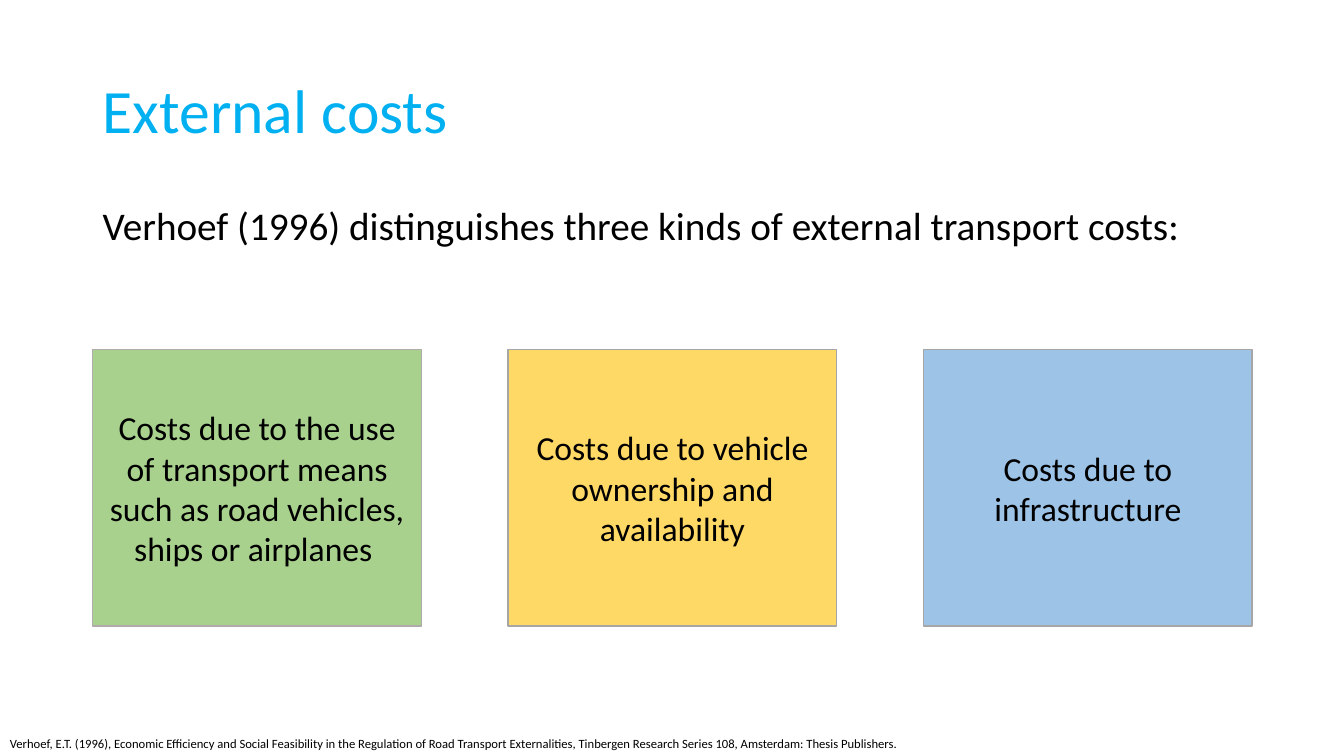
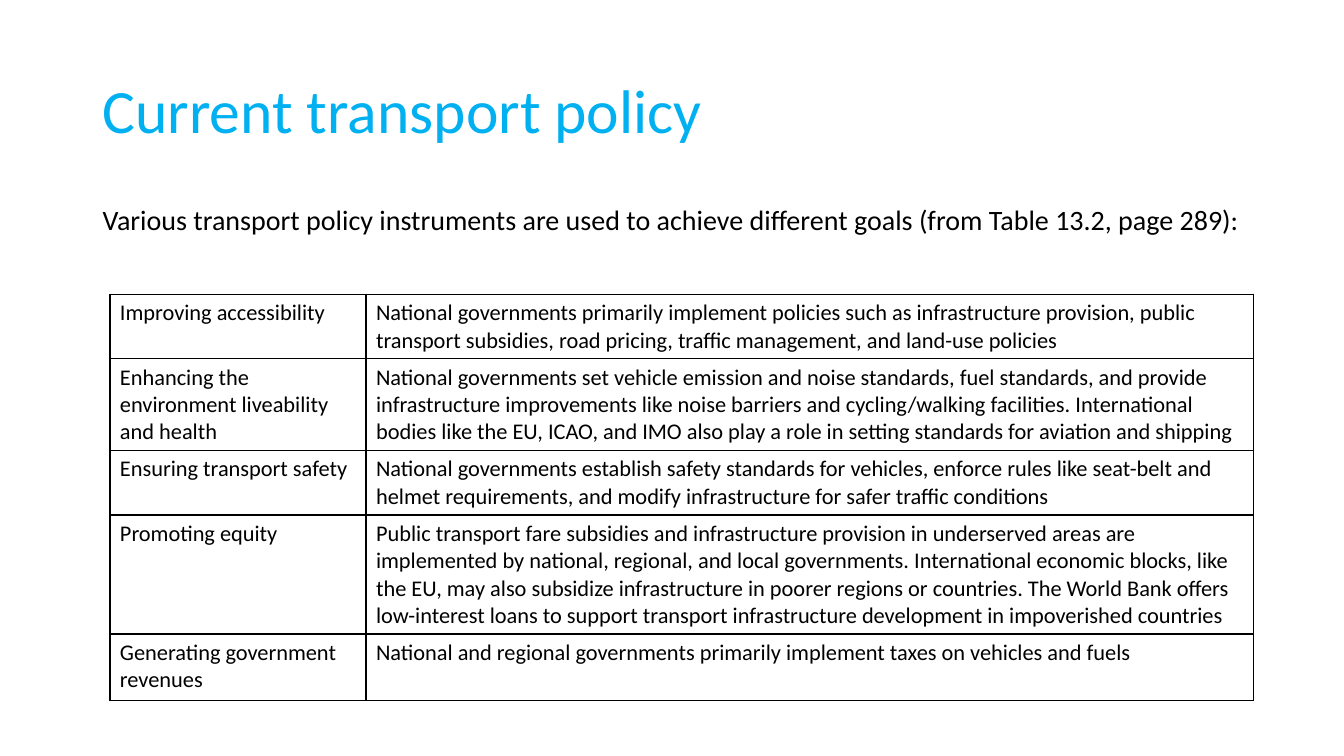
from lxml import etree
from pptx import Presentation
from pptx import util as u
from pptx.dml.color import RGBColor
from pptx.enum import shapes, text
from pptx.oxml.ns import qn

FONT = "Calibri"
COLORS = {
    "title": "00B0F0",
    "text": "000000",
    "border": "000000",
    "use": "A9D18E",
    "ownership": "FFD966",
    "infrastructure": "9DC3E6",
    "warm_gray": "AFABAB",
    "gray": "A6A6A6",
}
LEFT, WIDTH = 0.92, 11.5

COST_KINDS = [
    ("Costs due to the use of transport means such as road vehicles, ships or airplanes ",
     "use", "warm_gray"),
    ("Costs due to vehicle ownership and availability", "ownership", "gray"),
    ("Costs due to infrastructure", "infrastructure", "gray"),
]
SOURCE = (
    "Verhoef, E.T. (1996), Economic Efficiency and Social Feasibility in the Regulation of "
    "Road Transport Externalities, Tinbergen Research Series 108, Amsterdam: Thesis Publishers."
)
POLICIES = [
    (0.64, "Improving accessibility",
     "National governments primarily implement policies such as infrastructure provision, "
     "public transport subsidies, road pricing, traffic management, and land-use policies"),
    (0.91, "Enhancing the environment liveability and health",
     "National governments set vehicle emission and noise standards, fuel standards, and "
     "provide infrastructure improvements like noise barriers and cycling/walking facilities. "
     "International bodies like the EU, ICAO, and IMO also play a role in setting standards "
     "for aviation and shipping"),
    (0.64, "Ensuring transport safety",
     "National governments establish safety standards for vehicles, enforce rules like "
     "seat-belt and helmet requirements, and modify infrastructure for safer traffic conditions"),
    (1.18, "Promoting equity",
     "Public transport fare subsidies and infrastructure provision in underserved areas are "
     "implemented by national, regional, and local governments. International economic blocks, "
     "like the EU, may also subsidize infrastructure in poorer regions or countries. The World "
     "Bank offers low-interest loans to support transport infrastructure development in "
     "impoverished countries"),
    (0.66, "Generating government revenues",
     "National and regional governments primarily implement taxes on vehicles and fuels"),
]


def rgb(name):
    return RGBColor.from_string(COLORS[name])


def write(tf, content, size, color="text", align=None, spacing=None):
    tf.word_wrap = True
    p = tf.paragraphs[0]
    p.text = content
    p.alignment = align
    p.line_spacing = spacing
    p.font.name = FONT
    p.font.size = u.Pt(size)
    p.font.color.rgb = rgb(color)


def add_text(s, box, content, size, color="text", spacing=None,
             anchor=text.MSO_ANCHOR.TOP):
    tf = s.shapes.add_textbox(*map(u.Inches, box)).text_frame
    tf.vertical_anchor = anchor
    write(tf, content, size, color, spacing=spacing)


def add_slide(prs, title, intro, intro_size):
    s = prs.slides.add_slide(prs.slide_layouts[6])
    add_text(s, (LEFT, 0.4, WIDTH, 1.45), title, 44, "title", 0.9, text.MSO_ANCHOR.MIDDLE)
    add_text(s, (LEFT, 2, WIDTH, 0.6), intro, intro_size, spacing=0.9)
    return s


def add_cost_boxes(s):
    width, height = 3.26, 2.74
    step = (WIDTH - width) / (len(COST_KINDS) - 1)
    for i, (label, fill, line) in enumerate(COST_KINDS):
        box = (LEFT + i * step, 3.47, width, height)
        sp = s.shapes.add_shape(shapes.MSO_SHAPE.RECTANGLE, *map(u.Inches, box))
        sp.shadow.inherit = False
        sp.fill.solid()
        sp.fill.fore_color.rgb = rgb(fill)
        sp.line.color.rgb = rgb(line)
        sp.line.width = u.Pt(1)
        sp.text_frame.vertical_anchor = text.MSO_ANCHOR.MIDDLE
        write(sp.text_frame, label, 24, align=text.PP_ALIGN.CENTER)


def set_borders(cell):
    tc_pr = cell._tc.get_or_add_tcPr()
    for side in ("lnL", "lnR", "lnT", "lnB"):
        ln = etree.SubElement(tc_pr, qn(f"a:{side}"), w=str(u.Pt(1)))
        fill = etree.SubElement(ln, qn("a:solidFill"))
        etree.SubElement(fill, qn("a:srgbClr"), val=COLORS["border"])


def add_policy_table(s):
    widths = (2.54, 8.8)
    heights = [row[0] for row in POLICIES]
    box = (1.09, 2.92, sum(widths), sum(heights))
    table = s.shapes.add_table(len(POLICIES), len(widths), *map(u.Inches, box)).table
    table.first_row = table.horz_banding = False
    for column, width in zip(table.columns, widths):
        column.width = u.Inches(width)
    for row, (height, *contents) in zip(table.rows, POLICIES):
        row.height = u.Inches(height)
        for cell, content in zip(row.cells, contents):
            set_borders(cell)
            cell.fill.background()
            write(cell.text_frame, content, 16)


def main():
    prs = Presentation()
    prs.slide_width, prs.slide_height = u.Inches(13.33), u.Inches(7.5)

    s = add_slide(prs, "External costs",
                  "Verhoef (1996) distinguishes three kinds of external transport costs:", 28)
    add_cost_boxes(s)
    add_text(s, (0, 7.25, 10.58, 0.25), SOURCE, 9)

    s = add_slide(prs, "Current transport policy",
                  "Various transport policy instruments are used to achieve different goals "
                  "(from Table 13.2, page 289):", 20)
    add_policy_table(s)

    prs.save("out.pptx")


if __name__ == "__main__":
    main()
